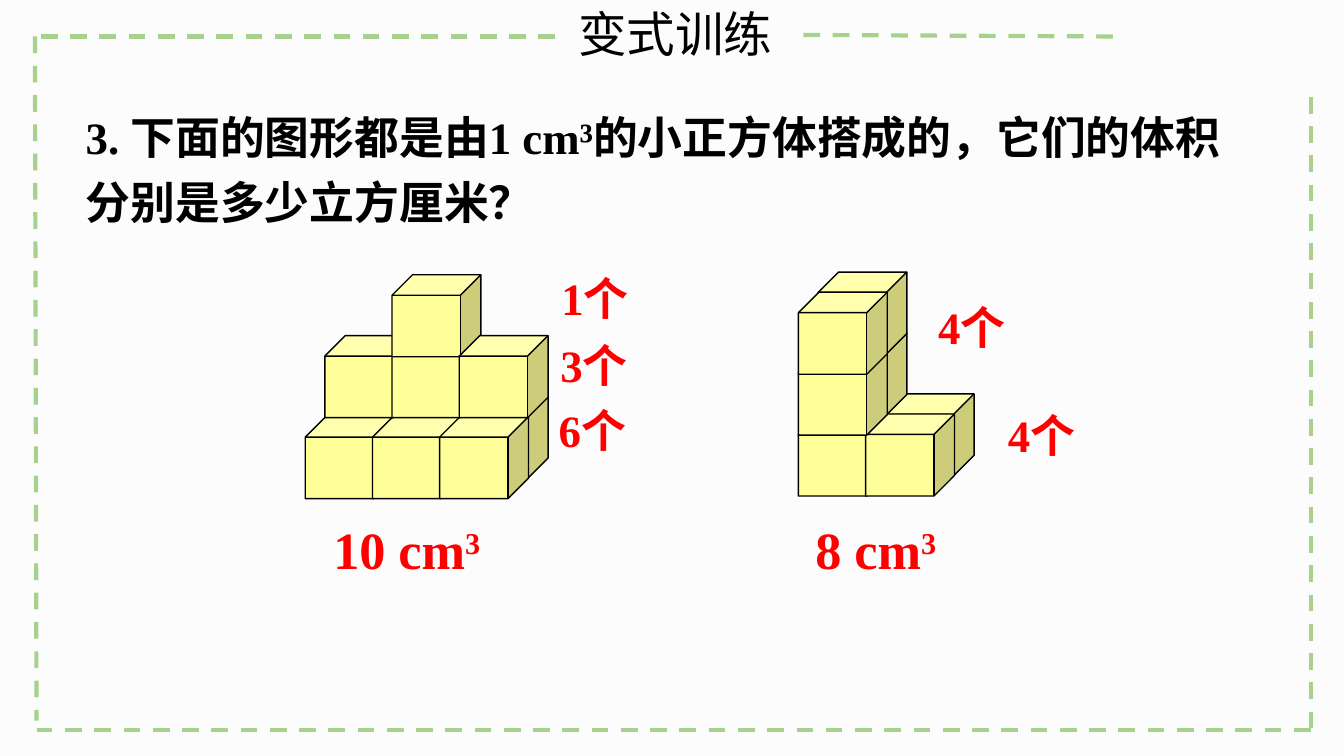
from lxml.etree import SubElement
from pptx import Presentation
from pptx.dml.color import RGBColor
from pptx.enum.dml import MSO_LINE
from pptx.enum.shapes import MSO_CONNECTOR, MSO_SHAPE
from pptx.enum.text import MSO_ANCHOR, MSO_AUTO_SIZE, PP_ALIGN
from pptx.oxml.ns import qn
from pptx.util import Cm, Pt

COLORS = {
    "background": "FCFCFC",
    "frame": "A9D18E",
    "text": "000000",
    "answer": "FF0000",
    "cube": "FFFF99",
    "edge": "000000",
}
LATIN, CHINESE = "Times New Roman", "Noto Sans CJK SC"

CUBE_WIDTH, CUBE_HEIGHT = 1.68, 1.55
COLUMN_STEP, LAYER_STEP = 1.27, 1.15
DEPTH_X, DEPTH_Y = 0.37, 0.38

# Cubes as (column, row behind the front, layer), from back to front
PYRAMID = (
    [(column, 1, 0) for column in range(3)]
    + [(column, 0, 0) for column in range(3)]
    + [(0, 1, 1), (1, 1, 1), (1, 1, 2), (2, 1, 1)]
)
TOWER = [
    (0, 1, 0), (1, 1, 0), (0, 0, 0), (1, 0, 0),
    (0, 1, 1), (0, 1, 2), (0, 0, 1), (0, 0, 2),
]


def rgb(name):
    return RGBColor.from_string(COLORS[name])


def format_paragraph(paragraph, size, color="text", latin=LATIN, bold=True):
    font = paragraph.font
    font.size, font.bold, font.name = Pt(size), bold, latin
    font.color.rgb = rgb(color)
    defaults = paragraph._p.pPr.find(qn("a:defRPr"))
    SubElement(defaults, qn("a:ea")).set("typeface", CHINESE)


def add_text(slide, box, words, size, color="text"):
    """Add a one-paragraph text box at (left, top, width, height) in cm."""
    frame = slide.shapes.add_textbox(*map(Cm, box)).text_frame
    frame.word_wrap = True
    paragraph = frame.paragraphs[0]
    paragraph.add_run().text = words
    format_paragraph(paragraph, size, color)
    return paragraph


def add_frame(slide, left, top, right, bottom):
    """Draw the dashed border, open around the title and at the top right."""
    sides = [
        (left, top, left + 0.03, bottom - 0.18),
        (right, 1.83, right, bottom),
        (right, bottom, left + 0.03, bottom),
        (21.03, top, 15.04, top - 0.03),
        (10.49, top, left + 0.03, top),
    ]
    for side in sides:
        dash = slide.shapes.add_connector(MSO_CONNECTOR.STRAIGHT, *map(Cm, side))
        dash.line.color.rgb = rgb("frame")
        dash.line.width = Pt(2.25)
        dash.line.dash_style = MSO_LINE.DASH
        SubElement(dash._element.spPr, qn("a:effectLst"))


def add_title(slide, left, top, width, height):
    title = slide.shapes.title
    title.left, title.top = Cm(left), Cm(top)
    title.width, title.height = Cm(width), Cm(height)
    frame = title.text_frame
    frame.text = "变式训练"
    frame.auto_size = MSO_AUTO_SIZE.NONE
    frame.vertical_anchor = MSO_ANCHOR.TOP
    heading = frame.paragraphs[0]
    heading.alignment = PP_ALIGN.LEFT
    format_paragraph(heading, 26, latin=CHINESE, bold=False)


def add_question(slide, box):
    question = add_text(
        slide, box,
        "3. 下面的图形都是由1 cm³的小正方体搭成的，它们的体积分别是多少立方厘米？", 24,
    )
    question.line_spacing = 1.2


def add_solid(slide, left, top, cells):
    """Stack cubes; left and top place the front-left cube of the bottom layer."""
    solid = slide.shapes.add_group_shape()
    for column, row, layer in cells:
        cube = solid.shapes.add_shape(
            MSO_SHAPE.CUBE,
            Cm(left + column * COLUMN_STEP + row * DEPTH_X),
            Cm(top - layer * LAYER_STEP - row * DEPTH_Y),
            Cm(CUBE_WIDTH), Cm(CUBE_HEIGHT),
        )
        cube.shadow.inherit = False
        cube.fill.solid()
        cube.fill.fore_color.rgb = rgb("cube")
        cube.line.color.rgb = rgb("edge")
        cube.line.width = Pt(0.75)


def add_counts(slide, counts):
    for left, top, count in counts:
        add_text(slide, (left, top, 2.36, 1.27), f"{count}个", 24, "answer")


def add_volume(slide, left, top, volume):
    paragraph = add_text(slide, (left, top, 3.94, 1.45), f"{volume} cm", 28, "answer")
    exponent = paragraph.add_run()
    exponent.text = "3"
    exponent._r.get_or_add_rPr().set("baseline", "30000")


def main():
    prs = Presentation()
    prs.slide_width, prs.slide_height = Cm(25.4), Cm(14.28)
    slide = prs.slides.add_slide(prs.slide_layouts[5])
    slide.background.fill.solid()
    slide.background.fill.fore_color.rgb = rgb("background")

    add_frame(slide, 0.66, 0.69, 24.77, 13.79)
    add_title(slide, 10.67, -0.05, 4.39, 1.37)
    add_question(slide, (1.37, 1.75, 22.78, 2.72))

    add_solid(slide, 5.77, 7.87, PYRAMID)
    add_counts(slide, [(10.36, 4.98, 1), (10.34, 6.25, 3), (10.31, 7.49, 6)])
    add_volume(slide, 6.05, 9.65, 10)

    add_solid(slide, 15.09, 7.82, TOWER)
    add_counts(slide, [(17.48, 5.54, 4), (18.8, 7.57, 4)])
    add_volume(slide, 15.16, 9.65, 8)

    prs.save("out.pptx")


if __name__ == "__main__":
    main()
